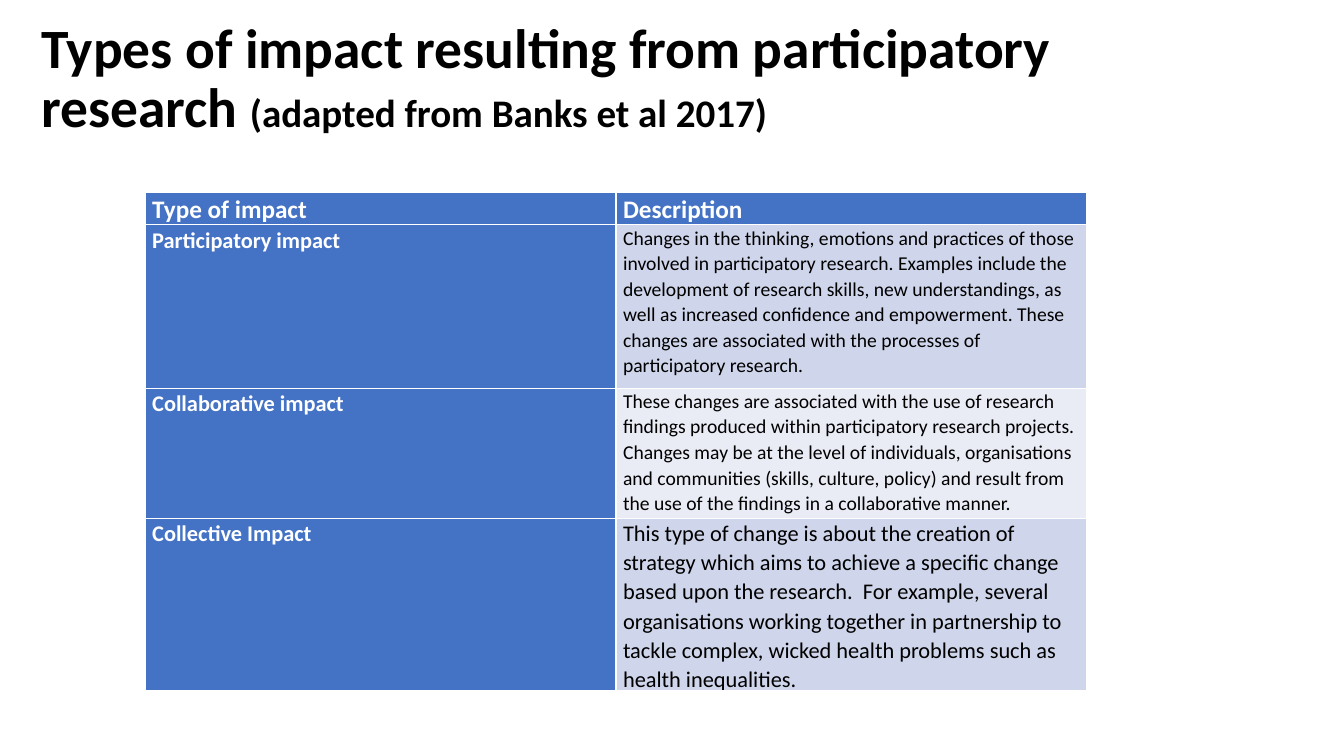
from pptx import Presentation
from pptx.dml.color import RGBColor
from pptx.enum.text import MSO_ANCHOR
from pptx.util import Emu, Pt

MIDDLE = MSO_ANCHOR.MIDDLE

PX = 9144  # EMU per px, 100 px to the inch
FONT = "Calibri"
BLACK = RGBColor(0x00, 0x00, 0x00)
WHITE = RGBColor(0xFF, 0xFF, 0xFF)
BLUE = RGBColor(0x44, 0x72, 0xC4)
BAND = RGBColor(0xCF, 0xD5, 0xEA)
PALE = RGBColor(0xE9, 0xEB, 0xF5)

TITLE = [
    ("Types of impact resulting from participatory research ", 39.6),
    ("(adapted from Banks et al 2017)", 27.9),
]

HEAD = ("Type of impact", "Description")

# Impact, description, description size, row height
IMPACTS = [
    ("Participatory impact",
     "Changes in the thinking, emotions and practices of those involved in "
     "participatory research. Examples include the development of research "
     "skills, new understandings, as well as increased confidence and "
     "empowerment. These changes are associated with the processes of "
     "participatory research.", 14, 162),
    ("Collaborative impact",
     "These changes are associated with the use of research findings produced "
     "within participatory research projects. Changes may be at the level of "
     "individuals, organisations and communities (skills, culture, policy) "
     "and result from the use of the findings in a collaborative manner.",
     14, 129),
    ("Collective Impact",
     "This type of change is about the creation of strategy which aims to "
     "achieve a specific change based upon the research.  For example, "
     "several organisations working together in partnership to tackle "
     "complex, wicked health problems such as health inequalities.", 16, 171),
]


def px(n):
    return Emu(n * PX)


def style(run, size, color, bold):
    font = run.font
    font.name = FONT
    font.size = Pt(size)
    font.bold = bold
    font.color.rgb = color


def add_title(slide):
    box = slide.shapes.add_textbox(px(31), px(37), px(1150), px(146))
    frame = box.text_frame
    frame.word_wrap = True
    frame.vertical_anchor = MIDDLE
    frame.margin_bottom = px(66)  # lifts the heading above the table
    para = frame.paragraphs[0]
    para.line_spacing = 0.9
    for text, size in TITLE:
        run = para.add_run()
        run.text = text
        style(run, size, BLACK, True)


def fill_cell(cell, text, size, fill, color=WHITE, bold=True):
    cell.fill.solid()
    cell.fill.fore_color.rgb = fill
    cell.margin_left = cell.margin_right = px(7)
    cell.margin_top = cell.margin_bottom = 0
    cell.text_frame.text = text
    para = cell.text_frame.paragraphs[0]
    para.line_spacing = 1.07
    style(para.runs[0], size, color, bold)


def add_grid(slide):
    shape = slide.shapes.add_table(len(IMPACTS) + 1, len(HEAD),
                                   px(144), px(191), px(934), px(492))
    table = shape.table
    table.first_col = True

    # Heading row
    table.rows[0].height = px(30)
    for col, text in enumerate(HEAD):
        fill_cell(table.cell(0, col), text, 18, BLUE)

    # One row per impact, in alternating shades
    for row, (name, text, size, height) in enumerate(IMPACTS, 1):
        table.rows[row].height = px(height)
        fill_cell(table.cell(row, 0), name, 16, BLUE)
        shade = BAND if row % 2 else PALE
        fill_cell(table.cell(row, 1), text, size, shade, BLACK, False)


def main():
    prs = Presentation()
    prs.slide_width, prs.slide_height = px(1333), px(750)
    slide = prs.slides.add_slide(prs.slide_layouts[6])
    add_title(slide)
    add_grid(slide)
    prs.save("out.pptx")


if __name__ == "__main__":
    main()
